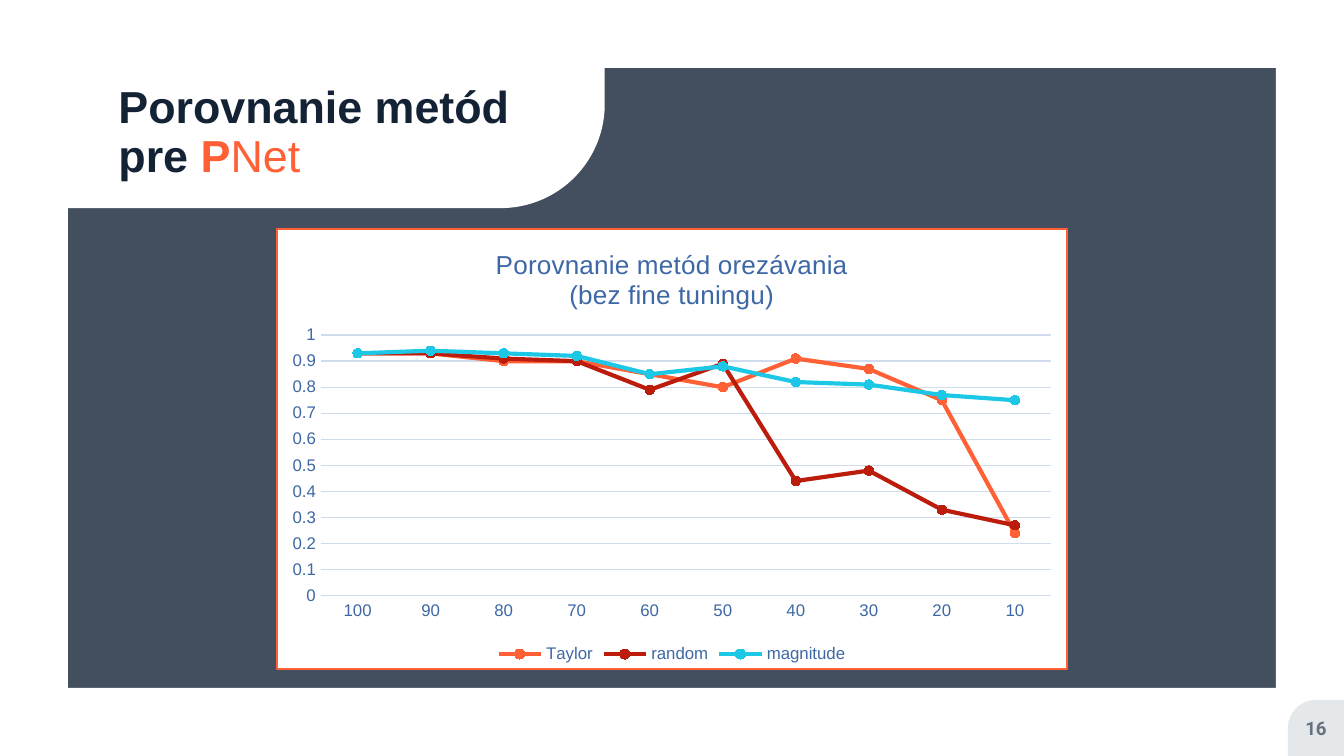
from dataclasses import dataclass

from pptx import Presentation
from pptx.chart.data import CategoryChartData
from pptx.dml.color import RGBColor
from pptx.enum.chart import XL_CHART_TYPE, XL_LEGEND_POSITION, XL_MARKER_STYLE, XL_TICK_MARK
from pptx.enum.shapes import MSO_SHAPE
from pptx.enum.text import MSO_ANCHOR, PP_ALIGN
from pptx.oxml import parse_xml
from pptx.oxml.ns import nsdecls, qn
from pptx.slide import Slide
from pptx.util import Pt

COLORS = {
    "navy": "142236",
    "white": "FFFFFF",
    "orange": "FF6035",
    "red": "BB1C0B",
    "cyan": "1DC8E6",
    "blue": "3D68A5",
    "grid": "CFDCED",
    "tab": "E5E8EB",
    "gray": "667180",
}
WIDTH, HEIGHT = 720, 405
TAB = 30

SHARES = range(100, 0, -10)
METHODS = [
    ("Taylor", "orange", (0.93, 0.93, 0.9, 0.9, 0.85, 0.8, 0.91, 0.87, 0.75, 0.24)),
    ("random", "red", (0.93, 0.93, 0.91, 0.9, 0.79, 0.89, 0.44, 0.48, 0.33, 0.27)),
    ("magnitude", "cyan", (0.93, 0.94, 0.93, 0.92, 0.85, 0.88, 0.82, 0.81, 0.77, 0.75)),
]


def rgb(name):
    return RGBColor.from_string(COLORS[name])


@dataclass
class SlideBuilder:
    page: Slide
    font: str = "Arial"

    def style(self, font, size, color, bold=False, name=None):
        font.name = name or self.font
        font.size = Pt(size)
        font.bold = bold
        font.color.rgb = rgb(color)

    def shape(self, kind, area, color, adjust=None, alpha=None, flip=False, rotation=0):
        shape = self.page.shapes.add_shape(kind, *map(Pt, area))
        shape.shadow.inherit = False
        shape.fill.solid()
        shape.fill.fore_color.rgb = rgb(color)
        shape.line.fill.background()
        shape.rotation = rotation
        if adjust is not None:
            shape.adjustments[0] = adjust
        if flip:
            shape._element.spPr.find(qn("a:xfrm")).set("flipH", "1")
        if alpha is not None:
            fill_color = shape._element.spPr.find(".//" + qn("a:srgbClr"))
            fill_color.append(parse_xml(f'<a:alpha {nsdecls("a")} val="{alpha * 1000}"/>'))

    def text(self, area, lines, size, align=PP_ALIGN.LEFT, spacing=1.0, name=None):
        box = self.page.shapes.add_textbox(*map(Pt, area))
        frame = box.text_frame
        frame.word_wrap = True
        frame.vertical_anchor = MSO_ANCHOR.MIDDLE
        frame.margin_left = frame.margin_right = frame.margin_top = frame.margin_bottom = 0
        para = frame.paragraphs[0]
        para.alignment = align
        para.line_spacing = spacing
        for index, line in enumerate(lines):
            if index:
                para.add_line_break()
            for words, color, bold in line:
                span = para.add_run()
                span.text = words
                self.style(span.font, size, color, bold, name)

    def line_chart(self, area, title, categories, methods):
        data = CategoryChartData()
        data.categories = [str(category) for category in categories]
        for name, _, values in methods:
            data.add_series(name, values)
        frame = self.page.shapes.add_chart(XL_CHART_TYPE.LINE_MARKERS, *map(Pt, area), data)
        chart = frame.chart
        self.style(chart.font, 10, "navy")
        self.chart_frame(chart, "white", "orange")

        chart.has_title = True
        para = chart.chart_title.text_frame.paragraphs[0]
        para.text = title
        self.style(para.font, 14, "blue")
        for span in para.runs:
            self.style(span.font, 14, "blue")
        chart.chart_title.include_in_layout = False

        chart.has_legend = True
        chart.legend.position = XL_LEGEND_POSITION.BOTTOM
        chart.legend.include_in_layout = False
        self.style(chart.legend.font, 9, "blue")

        for axis in (chart.category_axis, chart.value_axis):
            axis.major_tick_mark = axis.minor_tick_mark = XL_TICK_MARK.NONE
            self.style(axis.tick_labels.font, 9, "blue")
        scale = chart.value_axis
        scale.minimum_scale, scale.maximum_scale, scale.major_unit = 0, 1, 0.1
        scale.format.line.fill.background()
        for line in (chart.category_axis.format.line, scale.major_gridlines.format.line):
            line.color.rgb = rgb("grid")
            line.width = Pt(0.75)

        plot = chart.plots[0]
        plot.vary_by_categories = False
        for series, (_, color, _) in zip(plot.series, methods):
            series.smooth = False
            series.format.line.color.rgb = rgb(color)
            series.format.line.width = Pt(2.25)
            marker = series.marker
            marker.style = XL_MARKER_STYLE.CIRCLE
            marker.size = 5
            marker.format.fill.solid()
            marker.format.fill.fore_color.rgb = rgb(color)
            marker.format.line.color.rgb = rgb(color)

    def chart_frame(self, chart, fill, border):
        chart._chartSpace.find(qn("c:txPr")).addprevious(parse_xml(
            f'<c:spPr {nsdecls("c", "a")}>'
            f'<a:solidFill><a:srgbClr val="{COLORS[fill]}"/></a:solidFill>'
            f'<a:ln w="{Pt(1)}"><a:solidFill><a:srgbClr val="{COLORS[border]}"/>'
            '</a:solidFill></a:ln></c:spPr>'
        ))


def main():
    deck = Presentation()
    deck.slide_width, deck.slide_height = Pt(WIDTH), Pt(HEIGHT)
    builder = SlideBuilder(deck.slides.add_slide(deck.slide_layouts[6]))

    full = (0, 0, WIDTH, HEIGHT)
    corner = (WIDTH - TAB, HEIGHT - TAB, TAB, TAB)
    builder.shape(MSO_SHAPE.RECTANGLE, full, "navy", alpha=80)
    builder.shape(MSO_SHAPE.FRAME, full, "white", adjust=0.09)
    builder.shape(MSO_SHAPE.ROUND_1_RECTANGLE, (0, 0, 324, 111.5), "white",
                  adjust=0.5, flip=True, rotation=180)
    builder.shape(MSO_SHAPE.ROUND_1_RECTANGLE, corner, "tab", adjust=0.5, flip=True)

    builder.text((63.5, 29.5, 263, 84), [
        [("Porovnanie metód", "navy", True)],
        [("pre ", "navy", True), ("P", "orange", True), ("Net", "orange", False)],
    ], 24, spacing=0.9)
    builder.text(corner, [[("16", "gray", True)]], 10, PP_ALIGN.CENTER, name="Roboto")
    builder.line_chart((147.75, 122, 424.5, 237),
                       "Porovnanie metód orezávania\v(bez fine tuningu)", SHARES, METHODS)

    deck.save("out.pptx")


if __name__ == "__main__":
    main()
